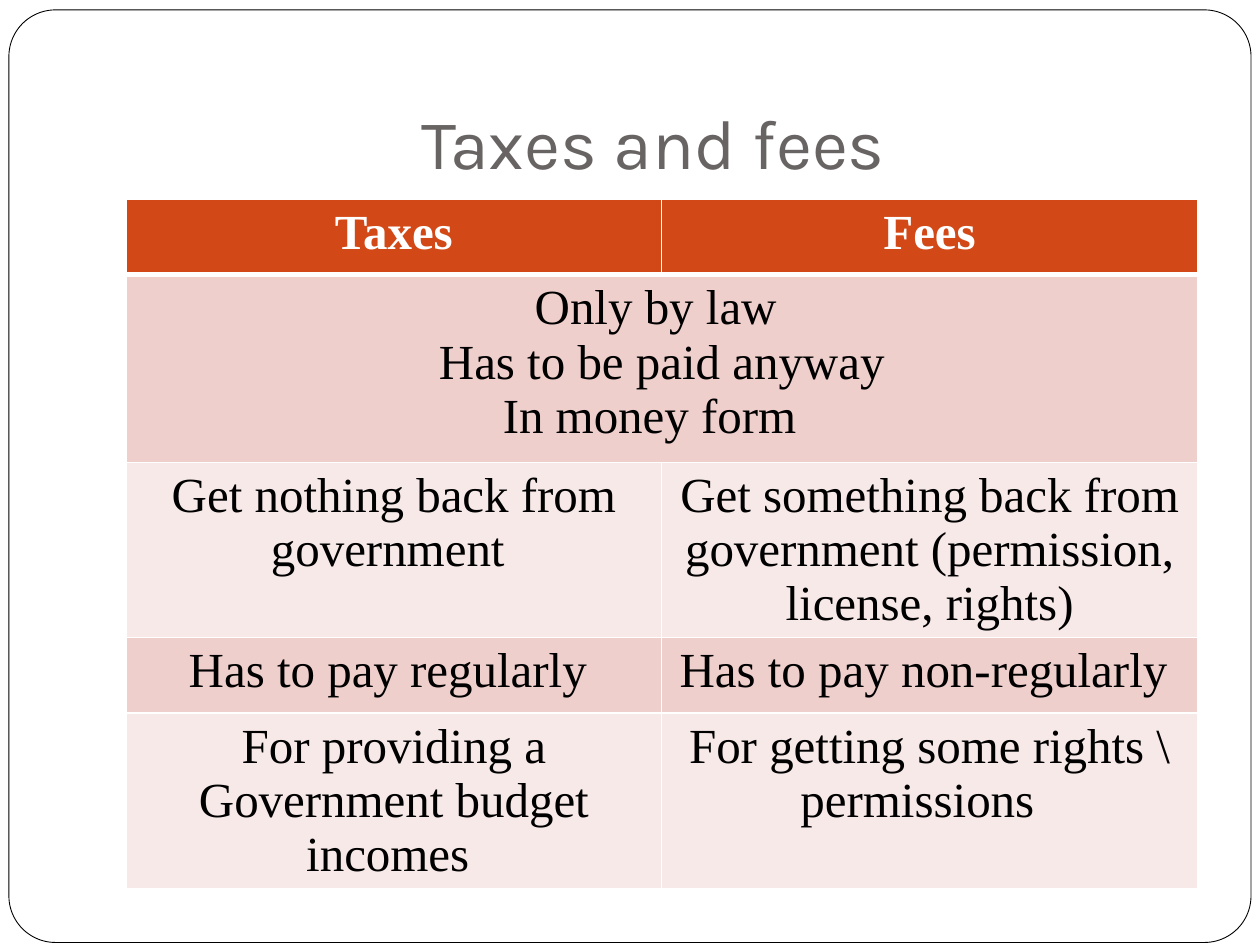
from lxml import etree
from pptx import Presentation
from pptx.dml.color import RGBColor
from pptx.enum.shapes import MSO_SHAPE
from pptx.enum.text import MSO_ANCHOR, PP_ALIGN
from pptx.oxml.ns import qn
from pptx.util import Cm, Pt

# Content
TITLE = "Taxes and fees "
ROWS = [
    ["Taxes", "Fees"],
    ["Only by law \nHas to be paid anyway\nIn money form  "],
    ["Get nothing back from government ",
     "Get something back from government (permission, license, rights)"],
    ["Has to pay regularly ", "Has to pay non-regularly "],
    ["For providing a Government budget incomes ",
     "For getting some rights \\ permissions  "],
]
HEIGHTS = [1.52, 3.78, 2.64, 1.52, 1.52]
WIDTH = 10.8

# Colours and formats
WHITE = RGBColor(0xFF, 0xFF, 0xFF)
BLACK = RGBColor(0, 0, 0)
GREY = RGBColor(0x69, 0x64, 0x64)
RUST = RGBColor(0xD3, 0x48, 0x17)
ROSE = RGBColor(0xEF, 0xCF, 0xCC)
PALE = RGBColor(0xF7, 0xE9, 0xE8)
HEAD = {"name": "Times New Roman", "size": Pt(28), "bold": True}
BODY = {**HEAD, "bold": False}
NAME = {"name": "Karla", "size": Pt(40), "bold": False}


def write(frame, text, form, tint):
    frame.text = text
    for para in frame.paragraphs:
        para.alignment = PP_ALIGN.CENTER
        for run in para.runs:
            for key, val in form.items():
                setattr(run.font, key, val)
            run.font.color.rgb = tint


def edge(cell, widths):
    """Draw white cell borders; they must come before the fill."""
    props = cell._tc.get_or_add_tcPr()
    for spot, (side, width) in enumerate(widths.items()):
        line = etree.Element(qn(f"a:ln{side}"), w=str(Pt(width)))
        fill = etree.SubElement(line, qn("a:solidFill"))
        etree.SubElement(fill, qn("a:srgbClr"), val=str(WHITE))
        props.insert(spot, line)


deck = Presentation()
deck.slide_width, deck.slide_height = Cm(25.4), Cm(19.05)
slide = deck.slides.add_slide(deck.slide_layouts[5])

# Rounded frame, behind the title
frame = slide.shapes.add_shape(
    MSO_SHAPE.ROUNDED_RECTANGLE, Cm(0.18), Cm(0.2), Cm(25.04), Cm(18.8))
frame.adjustments[0] = 0.05
frame.shadow.inherit = False
frame.fill.solid()
frame.fill.fore_color.rgb = WHITE
frame.line.color.rgb = BLACK
frame.line.width = Pt(0.5)
title = slide.shapes.title
title._element.addprevious(frame._element)

# Title
place = {"left": Cm(2.54), "top": Cm(0.76), "width": Cm(21.59), "height": Cm(3.18)}
for key, val in place.items():
    setattr(title, key, val)
title.text_frame.vertical_anchor = MSO_ANCHOR.BOTTOM
title.text_frame.margin_bottom = Cm(0.25)
write(title.text_frame, TITLE, NAME, GREY)

# Table: a header, then bands of two tints
table = slide.shapes.add_table(
    len(ROWS), 2, Cm(2.54), Cm(4.02), Cm(2 * WIDTH), Cm(sum(HEIGHTS))).table
for col in table.columns:
    col.width = Cm(WIDTH)
for r, (row, high) in enumerate(zip(ROWS, HEIGHTS)):
    table.rows[r].height = Cm(high)
    if len(row) == 1:
        table.cell(r, 0).merge(table.cell(r, 1))
    for c in range(2):
        cell = table.cell(r, c)
        cell.fill.solid()
        cell.fill.fore_color.rgb = RUST if r == 0 else (PALE, ROSE)[r % 2]
        edge(cell, {"L": 1, "R": 1, "T": 3 if r == 1 else 1, "B": 3 if r == 0 else 1})
        if c < len(row):
            write(cell.text_frame, row[c], BODY if r else HEAD, BLACK if r else WHITE)

deck.save("out.pptx")
